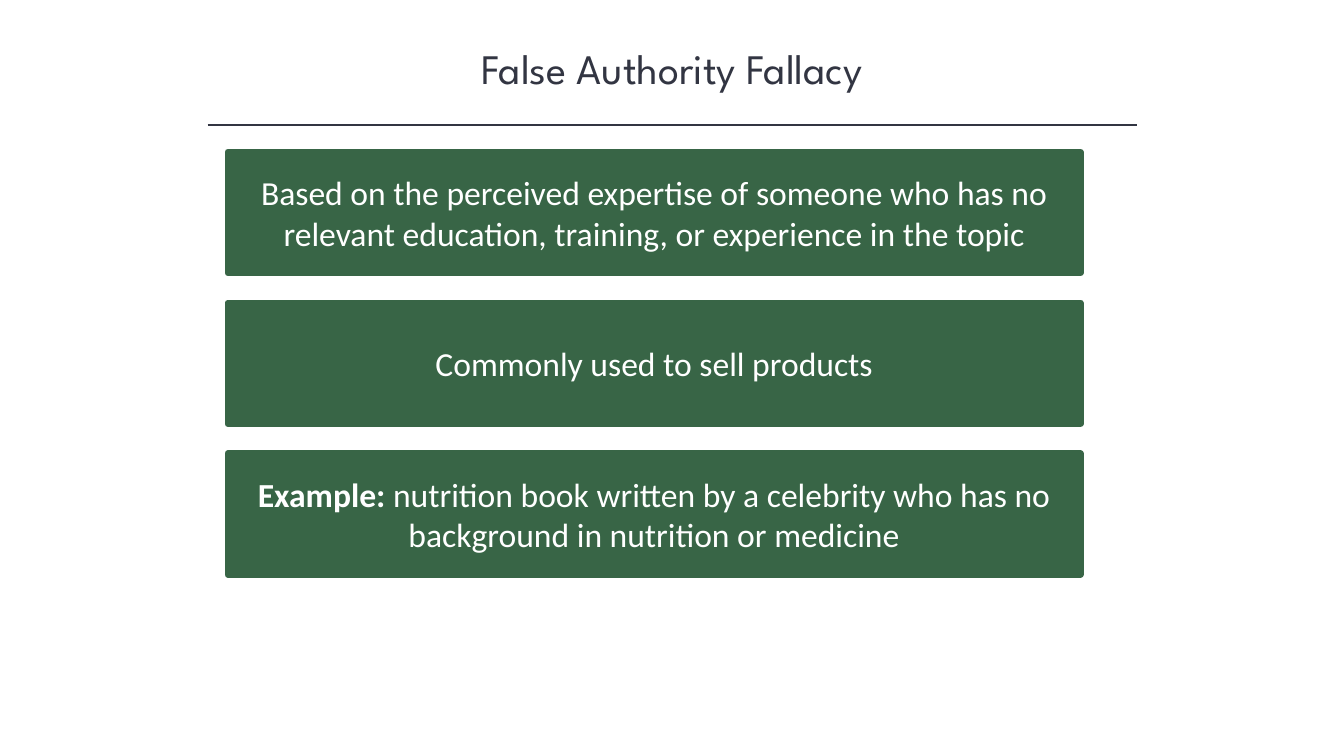
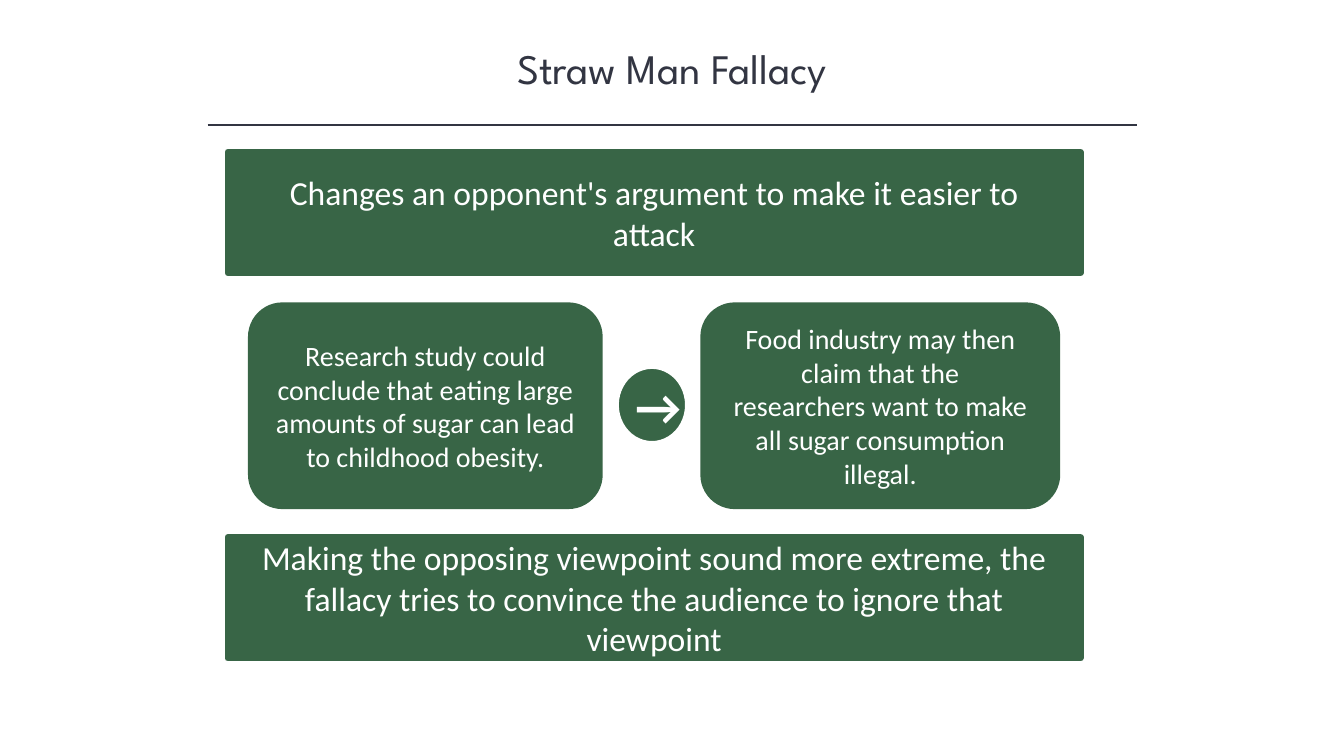
from pptx import Presentation
from pptx.dml.color import RGBColor
from pptx.enum.shapes import MSO_CONNECTOR, MSO_SHAPE
from pptx.enum.text import MSO_ANCHOR, PP_ALIGN
from pptx.oxml.ns import qn
from pptx.util import Cm, Pt
from lxml.etree import SubElement

# Style
GREEN = RGBColor(0x38, 0x65, 0x46)
INK = RGBColor(0x32, 0x35, 0x42)
WHITE = RGBColor(0xFF, 0xFF, 0xFF)
HEAD, BODY = "League Spartan", "Calibri"

# Layout, in cm
LEFT, WIDE, HIGH = 5.74, 21.49, 3.05
TOP, STEP = 3.83, 3.8
LOW = 13.54  # last band below the cards
CARD_TOP, CARD_HIGH = 7.62, 5.21


def write(shape, text, lead="", font=BODY, size=24, color=WHITE,
          bold=False, anchor=MSO_ANCHOR.MIDDLE, pad=0.25):
    """Fill a shape with centred text, after an optional bold lead."""
    frame = shape.text_frame
    frame.word_wrap = True
    frame.vertical_anchor = anchor
    frame.margin_left = frame.margin_right = Cm(pad)
    para = frame.paragraphs[0]
    para.alignment = PP_ALIGN.CENTER
    for part, heavy in ((lead, True), (text, bold)):
        if part:
            run = para.add_run()
            run.text = part
            run.font.name = font
            run.font.size = Pt(size)
            run.font.bold = heavy
            run.font.color.rgb = color


class Deck:
    def __init__(self):
        self.file = Presentation()
        self.file.slide_width = Cm(33.87)
        self.file.slide_height = Cm(19.05)
        self.slide = None

    def start(self, title):
        """Add a slide with its title and rule."""
        self.slide = self.file.slides.add_slide(self.file.slide_layouts[6])
        box = self.slide.shapes.add_textbox(Cm(4.24), Cm(0.94), Cm(25.4), Cm(1.55))
        write(box, title, font=HEAD, size=30, color=INK, anchor=MSO_ANCHOR.TOP)
        self.rule(5.23, 28.65, 3.15)

    def rule(self, left, right, y):
        line = self.slide.shapes.add_connector(
            MSO_CONNECTOR.STRAIGHT, Cm(left), Cm(y), Cm(right), Cm(y))
        line.line.color.rgb = INK
        line.line.width = Pt(1)
        SubElement(line._element.spPr, qn("a:effectLst"))

    def block(self, kind, x, y, w, h, text, edge=None, weight=0, **style):
        """Add a green shape with text, outlined if an edge is given."""
        shape = self.slide.shapes.add_shape(kind, Cm(x), Cm(y), Cm(w), Cm(h))
        shape.shadow.inherit = False
        shape.fill.solid()
        shape.fill.fore_color.rgb = GREEN
        if edge is None:
            shape.line.fill.background()
        else:
            shape.line.color.rgb = edge
            shape.line.width = Pt(weight)
        write(shape, text, **style)

    def band(self, y, text, **style):
        self.block(MSO_SHAPE.RECTANGLE, LEFT, y, WIDE, HIGH, text,
                   edge=GREEN, weight=4.5, **style)

    def card(self, x, w, text, **style):
        self.block(MSO_SHAPE.ROUNDED_RECTANGLE, x, CARD_TOP, w, CARD_HIGH,
                   text, size=20, **style)

    def badge(self, x, y, w, h, text):
        self.block(MSO_SHAPE.OVAL, x, y, w, h, text,
                   edge=WHITE, weight=6, size=36, bold=True)


def main():
    deck = Deck()

    # False authority: three even bands
    deck.start("False Authority Fallacy")
    bands = (
        ("", "Based on the perceived expertise of someone who has no "
             "relevant education, training, or experience in the topic"),
        ("", "Commonly used to sell products"),
        ("Example: ", "nutrition book written by a celebrity who has no "
                      "background in nutrition or medicine"),
    )
    for i, (lead, text) in enumerate(bands):
        deck.band(TOP + i * STEP, text, lead=lead)

    # Straw man: claim, change, purpose
    deck.start("Straw Man Fallacy")
    deck.band(TOP, "Changes an opponent's argument to make it easier to attack",
              pad=1.2)
    deck.card(6.25, 8.94, "Research study could conclude that eating large "
              "amounts of sugar can lead to childhood obesity.")
    deck.card(17.65, 9.07, "Food industry may then claim that the researchers "
              "want to make all sugar consumption illegal.", pad=0.56)
    deck.badge(15.49, 9.19, 1.88, 2.03, "→")
    deck.band(LOW, "Making the opposing viewpoint sound more extreme, the "
              "fallacy tries to convince the audience to ignore that viewpoint")

    deck.file.save("out.pptx")


if __name__ == "__main__":
    main()
